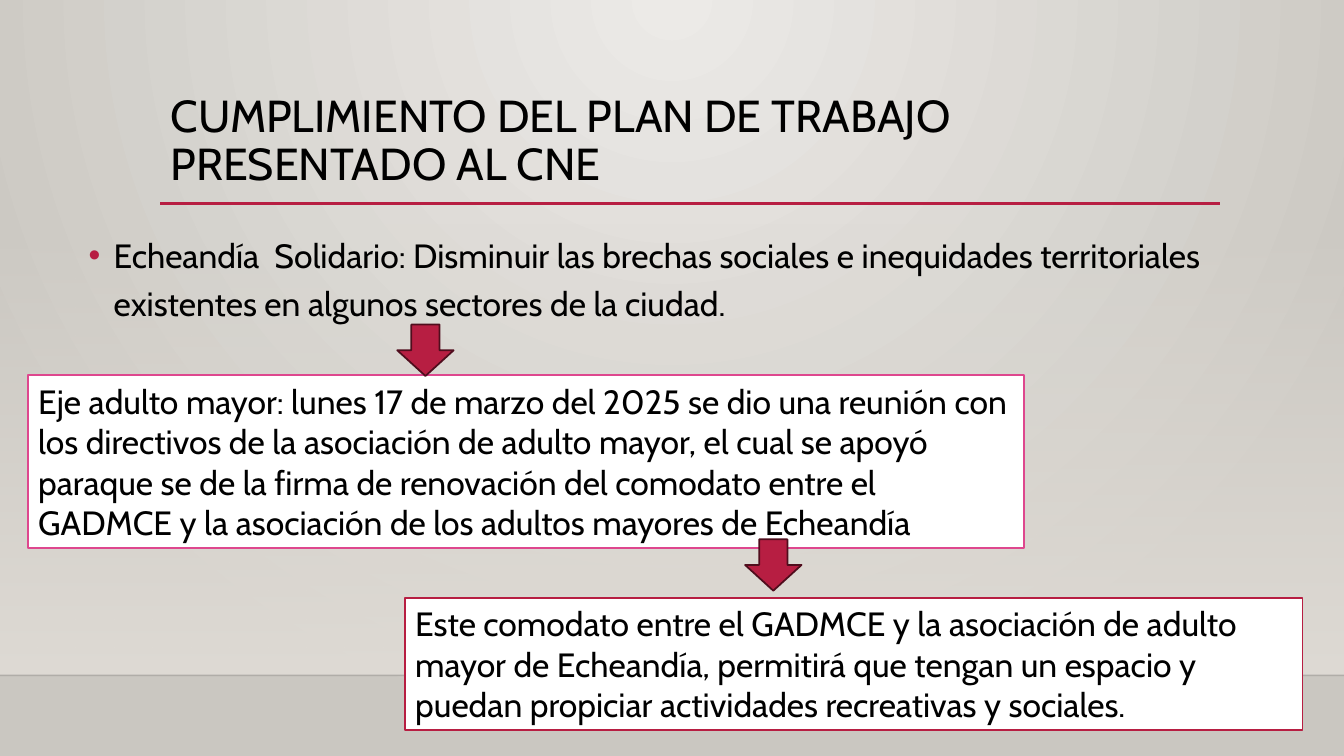
import pptx
import pptx.util
import pptx.dml.color
import pptx.enum.shapes
import pptx.enum.text
import pptx.oxml
import pptx.oxml.ns
from lxml import etree

Inches, Pt = pptx.util.Inches, pptx.util.Pt
RGB = pptx.dml.color.RGBColor
SHAPE = pptx.enum.shapes.MSO_SHAPE
qn = pptx.oxml.ns.qn

RED = RGB(0xB7, 0x1E, 0x42)
WINE = RGB(0x50, 0x0D, 0x1D)
PINK = RGB(0xDE, 0x47, 0x8E)
SAND = RGB(0xDF, 0xDB, 0xD5)
LIGHT = RGB(0xEC, 0xEA, 0xE7)
GREY = RGB(0xCA, 0xC7, 0xC1)
BLACK = RGB(0, 0, 0)
WHITE = RGB(255, 255, 255)
FONT = "Cabin"
WIDE, FLOOR = 13.33, 6.7

TITLE = "CUMPLIMIENTO DEL PLAN DE TRABAJO PRESENTADO AL CNE"
GOAL = ("Echeandía  Solidario: Disminuir las brechas sociales e inequidades "
        "territoriales existentes en algunos sectores de la ciudad.")
BOXES = [
    ((0.28, 3.72, 9.88, 1.72), PINK,
     "Eje adulto mayor: lunes 17 de marzo del 2025 se dio una reunión con los "
     "directivos de la asociación de adulto mayor, el cual se apoyó paraque se "
     "de la firma de renovación del comodato entre el GADMCE y la asociación de "
     "los adultos mayores de Echeandía"),
    ((4.02, 5.93, 8.9, 1.31), RED,
     "Este comodato entre el GADMCE y la asociación de adulto mayor de "
     "Echeandía, permitirá que tengan un espacio y puedan propiciar actividades "
     "recreativas y sociales."),
]
ARROWS = [(3.94, 3.22), (7.39, 5.35)]
RULES = [(0, WIDE, FLOOR, BLACK, 1, 20), (1.59, 12.1, 2.02, RED, 2.5, 100)]


def place(item, spot):
    """Set left, top, width and height in inches."""
    item.left, item.top, item.width, item.height = map(Inches, spot)


def write(item, text, size):
    """Put one left-aligned paragraph into an item and return it."""
    frame = item.text_frame
    frame.word_wrap = True
    frame.text = text
    para = frame.paragraphs[0]
    para.alignment = pptx.enum.text.PP_ALIGN.LEFT
    font = para.runs[0].font
    font.name, font.size, font.color.rgb = FONT, Pt(size), BLACK
    return para


def block(slide, kind, spot, fill, edge):
    """Add a filled and outlined preset shape."""
    item = slide.shapes.add_shape(kind, *map(Inches, spot))
    item.shadow.inherit = False
    item.fill.solid()
    item.fill.fore_color.rgb = fill
    item.line.color.rgb = edge
    item.line.width = Pt(1.25)
    return item


def blend(fill, first, last):
    """Give a fill a gradient of two colours."""
    fill.gradient()
    for stop, tint, pos in zip(fill.gradient_stops, (first, last), (0, 1)):
        stop.color.rgb = tint
        stop.position = pos


def fade(tint, part):
    """Set the opacity of a colour element in percent."""
    etree.SubElement(tint, qn("a:alpha"), val=str(part * 1000))


def backdrop(slide):
    """Paint the radial background and the haze above the floor."""
    blend(slide.background.fill, LIGHT, GREY)
    grad = slide.element.find(".//" + qn("a:gradFill"))
    grad.remove(grad.find(qn("a:lin")))
    ring = etree.SubElement(grad, qn("a:path"), path="circle")
    etree.SubElement(ring, qn("a:fillToRect"),
                     l="43000", t="0", r="43000", b="100000")
    haze = slide.shapes.add_shape(
        SHAPE.RECTANGLE, *map(Inches, (0, 2.21, WIDE, FLOOR - 2.21)))
    haze.shadow.inherit = False
    haze.line.fill.background()
    blend(haze.fill, SAND, SAND)
    haze.fill.gradient_angle = 270
    fade(haze.element.spPr.find(".//" + qn("a:srgbClr")), 0)


def rule(slide, left, right, top, tint, width, part):
    """Draw one horizontal line."""
    line = slide.shapes.add_connector(
        pptx.enum.shapes.MSO_CONNECTOR.STRAIGHT,
        *map(Inches, (left, top, right, top)))
    line.line.color.rgb = tint
    line.line.width = Pt(width)
    props = line.element.spPr
    if part < 100:
        fade(props.find(".//" + qn("a:srgbClr")), part)
    etree.SubElement(props, qn("a:effectLst"))


def bullet(para):
    """Give a paragraph a red bullet with a hanging indent."""
    props = para._p.get_or_add_pPr()
    props.set("marL", str(Inches(0.25)))
    props.set("indent", str(-Inches(0.25)))
    tint = etree.SubElement(props, qn("a:buClr"))
    etree.SubElement(tint, qn("a:srgbClr"), val=str(RED))
    etree.SubElement(props, qn("a:buFont"), typeface="Arial")
    etree.SubElement(props, qn("a:buChar"), char="•")


def main():
    """Build the slide and save it."""
    deck = pptx.Presentation()
    deck.slide_width, deck.slide_height = Inches(WIDE), Inches(7.5)
    slide = deck.slides.add_slide(deck.slide_layouts[5])
    backdrop(slide)
    for data in RULES:
        rule(slide, *data)

    title = slide.shapes.title
    place(title, (1.59, 0.88, 10.5, 1.15))
    write(title, TITLE, 32).line_spacing = 0.9
    title.text_frame.vertical_anchor = pptx.enum.text.MSO_ANCHOR.TOP

    goal = slide.shapes.add_textbox(*map(Inches, (0.78, 2.2, 11.54, 1.32)))
    para = write(goal, GOAL, 24)
    bullet(para)
    para.line_spacing = 1.2

    for spot, edge, text in BOXES:
        write(block(slide, SHAPE.RECTANGLE, spot, WHITE, edge), text, 24)
    for left, top in ARROWS:
        block(slide, SHAPE.DOWN_ARROW, (left, top, 0.56, 0.51), RED, WINE)
    deck.save("out.pptx")


if __name__ == "__main__":
    main()
